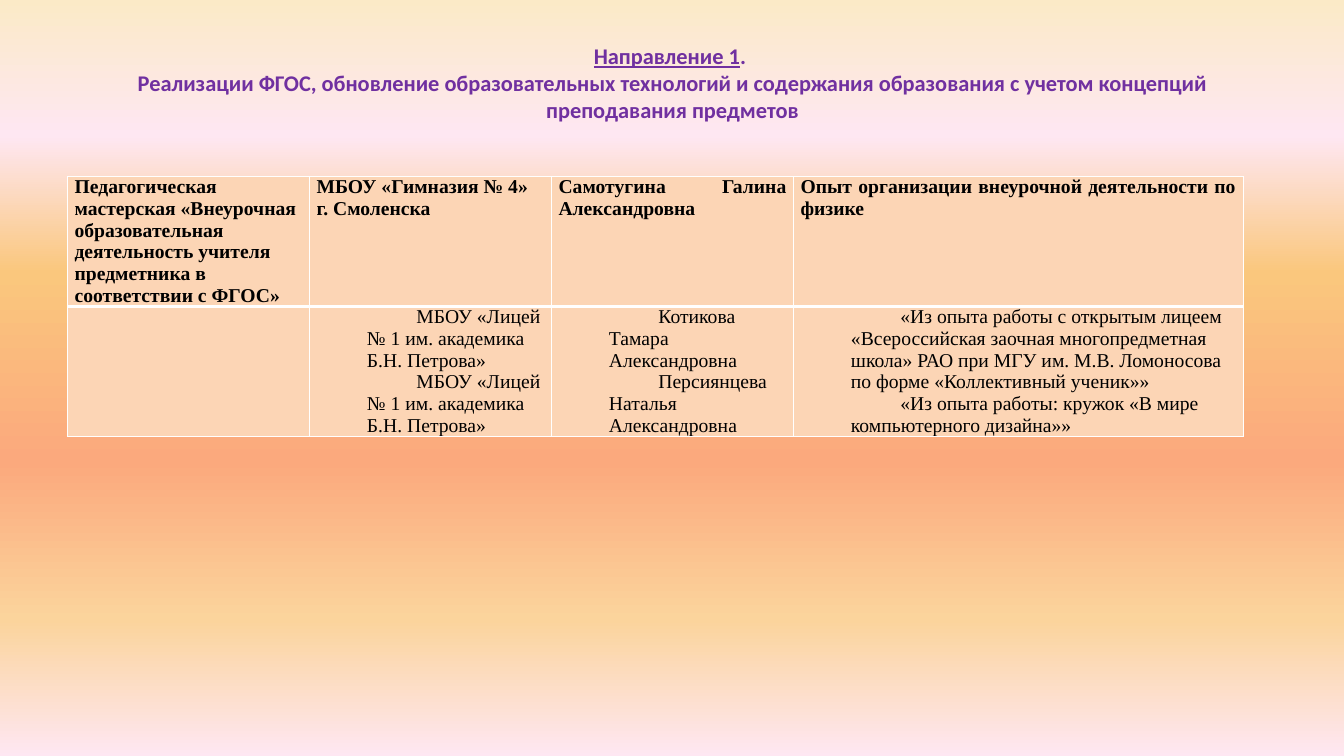
from dataclasses import dataclass

from lxml import etree
from pptx import Presentation
from pptx.dml.color import RGBColor
from pptx.enum.text import MSO_ANCHOR, MSO_AUTO_SIZE, PP_ALIGN
from pptx.oxml.ns import qn
from pptx.util import Inches, Pt

CENTER, LEFT, JUSTIFY = PP_ALIGN.CENTER, PP_ALIGN.LEFT, PP_ALIGN.JUSTIFY
MIDDLE = MSO_ANCHOR.MIDDLE
NO_AUTOFIT = MSO_AUTO_SIZE.NONE
TITLE_ONLY = 5


@dataclass(frozen=True)
class Theme:
    heading: str = "7030A0"
    text: str = "000000"
    cell: str = "FCD5B5"
    border: str = "FFFFFF"
    heading_font: str = "Calibri"
    table_font: str = "Times New Roman"
    heading_size: int = 16
    table_size: int = 14
    sky: tuple = ((0, "FBEAC7"), (18, "FEE7F2"), (36, "FAC77D"),
                  (61, "FBA97D"), (82, "FBD49C"), (100, "FEE7F2"))


THEME = Theme()


def style_font(font, name, size, color, bold):
    font.name = name
    font.size = Pt(size)
    font.bold = bold
    font.color.rgb = RGBColor.from_string(color)


def add_border(cell, side, width):
    """Draw one solid cell edge; side is L, R, T or B, width is in points."""
    line = etree.SubElement(cell._tc.get_or_add_tcPr(), qn(f"a:ln{side}"), w=str(Pt(width)))
    solid = etree.SubElement(line, qn("a:solidFill"))
    etree.SubElement(solid, qn("a:srgbClr"), val=THEME.border)


presentation = Presentation()
presentation.slide_width = Inches(13.33)
presentation.slide_height = Inches(7.5)
slide = presentation.slides.add_slide(presentation.slide_layouts[TITLE_ONLY])

# Background: vertical gradient, top to bottom
sky = slide.background.fill
sky.gradient()
sky.gradient_angle = 270
stops = slide.background._cSld.find(".//" + qn("a:gsLst"))
for stop in list(stops):
    stops.remove(stop)
for percent, color in THEME.sky:
    stop = etree.SubElement(stops, qn("a:gs"), pos=str(percent * 1000))
    etree.SubElement(stop, qn("a:srgbClr"), val=color)

# Heading
heading = slide.shapes.title
heading.left, heading.top = Inches(0.67), Inches(0.3)
heading.width, heading.height = Inches(12), Inches(1.04)
heading.text_frame.word_wrap = True
heading.text_frame.auto_size = NO_AUTOFIT
heading.text_frame.vertical_anchor = MIDDLE
direction = heading.text_frame.paragraphs[0]
direction.alignment = CENTER
direction.text = "Направление 1"
direction.add_run().text = ". "
direction.add_line_break()
direction.add_run().text = ("Реализации ФГОС, обновление образовательных технологий и содержания "
                            "образования с учетом концепций преподавания предметов")
for index, run in enumerate(direction.runs):
    style_font(run.font, THEME.heading_font, THEME.heading_size, THEME.heading, True)
    run.font.underline = index == 0

# Workshop table
LYCEUM = "МБОУ «Лицей № 1 им. академика Б.Н. Петрова»"
WORKSHOPS = [
    ["Педагогическая мастерская «Внеурочная образовательная деятельность учителя "
     "предметника в соответствии с ФГОС»",
     "МБОУ «Гимназия № 4» г. Смоленска",
     "Самотугина Галина Александровна",
     "Опыт организации внеурочной деятельности по физике"],
    ["",
     f"{LYCEUM}\n{LYCEUM}",
     "Котикова Тамара Александровна\nПерсиянцева Наталья Александровна",
     "«Из опыта работы с открытым лицеем «Всероссийская заочная многопредметная школа» "
     "РАО при МГУ им. М.В. Ломоносова по форме «Коллективный ученик»»\n"
     "«Из опыта работы: кружок «В мире компьютерного дизайна»»"],
]
COLUMN_WIDTHS = [2.4, 2.4, 2.4, 4.46]
HEADER_ALIGNMENTS = [LEFT, LEFT, JUSTIFY, JUSTIFY]
ROW_HEIGHT = 1.29

workshops = slide.shapes.add_table(
    len(WORKSHOPS), len(COLUMN_WIDTHS), Inches(0.67), Inches(1.75),
    Inches(sum(COLUMN_WIDTHS)), Inches(ROW_HEIGHT * len(WORKSHOPS))).table
workshops.first_row = True
workshops.horz_banding = False
for column, width in zip(workshops.columns, COLUMN_WIDTHS):
    column.width = Inches(width)

for row_index, row in enumerate(WORKSHOPS):
    is_header = row_index == 0
    workshops.rows[row_index].height = Inches(ROW_HEIGHT)
    for column_index, entry in enumerate(row):
        cell = workshops.cell(row_index, column_index)
        cell.margin_left = cell.margin_right = Inches(0.07)
        cell.margin_top = cell.margin_bottom = 0
        for side in "LRTB":
            add_border(cell, side, 3 if is_header and side == "B" else 1)
        cell.fill.solid()
        cell.fill.fore_color.rgb = RGBColor.from_string(THEME.cell)
        cell.text_frame.text = entry
        for paragraph in cell.text_frame.paragraphs:
            paragraph.alignment = HEADER_ALIGNMENTS[column_index] if is_header else LEFT
            if entry and not is_header:
                indents = paragraph._p.get_or_add_pPr()
                indents.set("marL", str(Inches(0.5)))
                indents.set("indent", str(Inches(0.49)))
            for run in paragraph.runs:
                style_font(run.font, THEME.table_font, THEME.table_size, THEME.text, is_header)

presentation.save("out.pptx")
